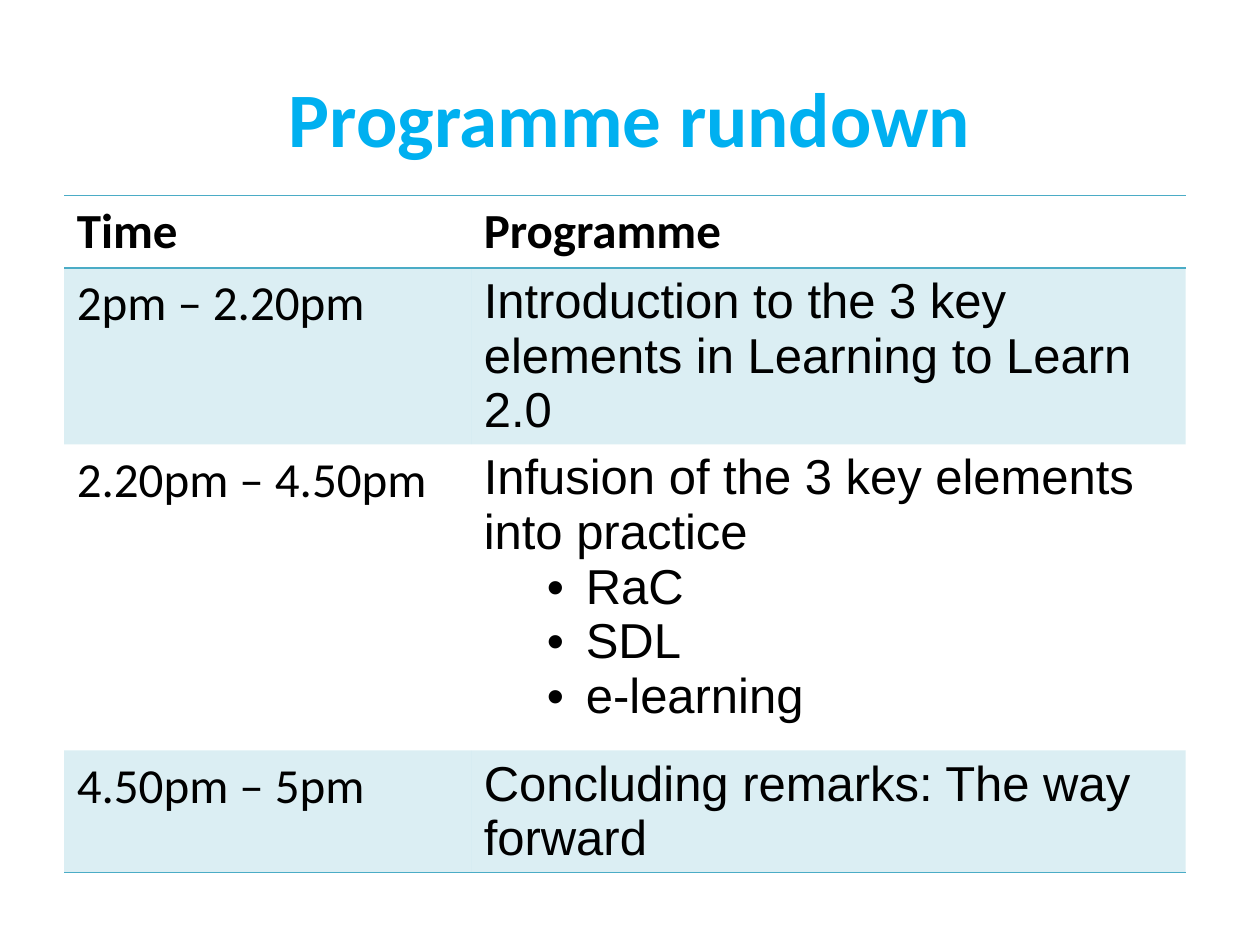
from pptx import Presentation
from pptx.dml.color import RGBColor
from pptx.enum import text
from pptx.oxml import parse_xml
from pptx.oxml.ns import nsdecls, qn
from pptx.util import Inches, Pt

HUES = {"title": "00B0F0", "ink": "000000", "teal": "4BACC6"}
COLS = [3.23, 5.67]
HEIGHTS = [0.57, 1.4, 2.43, 0.97]
RULED = {0, 1, 4}  # row edges that carry a line
ROWS = [
    ("Time", ["Programme"]),
    ("2pm – 2.20pm",
     ["Introduction to the 3 key elements in Learning to Learn 2.0"]),
    ("2.20pm – 4.50pm",
     ["Infusion of the 3 key elements into practice",
      "RaC", "SDL", "e-learning"]),
    ("4.50pm – 5pm", ["Concluding remarks: The way forward"]),
]


class Deck:
    def __init__(self):
        self.prs = Presentation()
        self.prs.slide_width, self.prs.slide_height = Inches(10), Inches(7.5)
        self.slide = self.prs.slides.add_slide(self.prs.slide_layouts[5])

    def put(self, para, words, hue="ink", **style):
        """Add a styled run to a paragraph."""
        run = para.add_run()
        run.text = words
        look = {"size": Pt(28), "name": "Calibri", "bold": False, **style}
        for key, value in look.items():
            setattr(run.font, key, value)
        run.font.color.rgb = RGBColor.from_string(HUES[hue])

    def title(self, words):
        shape = self.slide.shapes.title
        place = {"left": 0.5, "top": 0.3, "width": 9, "height": 1.25}
        for key, value in place.items():
            setattr(shape, key, Inches(value))
        shape.text_frame.vertical_anchor = text.MSO_ANCHOR.MIDDLE
        para = shape.text_frame.paragraphs[0]
        para.alignment = text.PP_ALIGN.CENTER
        self.put(para, words, "title", size=Pt(44), bold=True)

    def edge(self, cell, side, ruled):
        paint = (f'<a:solidFill><a:srgbClr val="{HUES["teal"]}"/></a:solidFill>'
                 if ruled else "<a:noFill/>")
        cell._tc.get_or_add_tcPr().append(parse_xml(
            f'<a:ln{side} {nsdecls("a")} w="{Pt(1)}">{paint}</a:ln{side}>'))

    def shade(self, cell, banded):
        if not banded:
            cell.fill.background()
            return
        cell.fill.solid()
        cell.fill.fore_color.rgb = RGBColor.from_string(HUES["teal"])
        tint = cell._tc.tcPr.find(qn("a:solidFill")).find(qn("a:srgbClr"))
        tint.append(parse_xml(f'<a:alpha {nsdecls("a")} val="20000"/>'))

    def bullet(self, para):
        para.level = 1
        props = para._p.get_or_add_pPr()
        props.set("marL", str(Inches(0.81)))
        props.set("indent", str(Inches(-0.31)))
        props.append(parse_xml(f'<a:buFont {nsdecls("a")} typeface="Arial"/>'))
        props.append(parse_xml(f'<a:buChar {nsdecls("a")} char="•"/>'))

    def fill(self, cell, lines, **style):
        """Set the first line plain and the others as bullets."""
        frame = cell.text_frame
        for i, line in enumerate(lines):
            para = frame.add_paragraph() if i else frame.paragraphs[0]
            if i:
                self.bullet(para)
            self.put(para, line, **style)

    def table(self, rows):
        box = [Inches(n) for n in (0.51, 1.55, sum(COLS), sum(HEIGHTS))]
        grid = self.slide.shapes.add_table(len(rows), len(COLS), *box).table
        grid.first_row = grid.horz_banding = False
        for col, width in zip(grid.columns, COLS):
            col.width = Inches(width)
        for r, (time, plan) in enumerate(rows):
            grid.rows[r].height = Inches(HEIGHTS[r])
            for c, lines in enumerate(([time], plan)):
                cell = grid.cell(r, c)
                edges = {"L": False, "R": False,
                         "T": r in RULED, "B": r + 1 in RULED}
                for side, ruled in edges.items():
                    self.edge(cell, side, ruled)
                self.shade(cell, r % 2 == 1)
                font = "Arial" if r and c else "Calibri"
                self.fill(cell, lines, name=font, bold=r == 0)


def main():
    deck = Deck()
    deck.title("Programme rundown")
    deck.table(ROWS)
    deck.prs.save("out.pptx")


if __name__ == "__main__":
    main()
